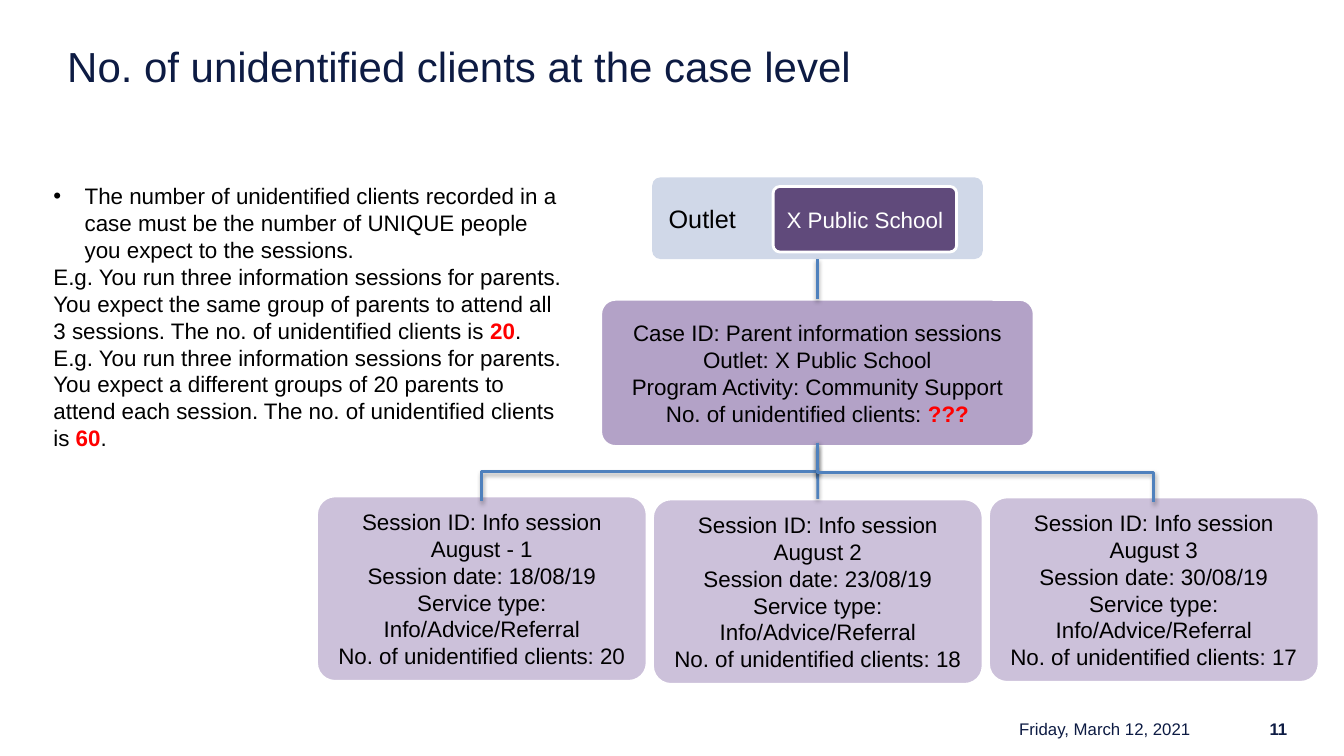
from lxml import etree
from pptx import Presentation
from pptx import util as u
from pptx.dml.color import RGBColor
from pptx.enum import shapes, text
from pptx.oxml import parse_xml
from pptx.oxml.ns import nsdecls, qn

NAVY, BLACK, WHITE, RED, BLUE = "0D1B43", "000000", "FFFFFF", "FF0000", "4F81BD"
LEFT, CENTER, RIGHT = text.PP_ALIGN.LEFT, text.PP_ALIGN.CENTER, text.PP_ALIGN.RIGHT
TOP, MIDDLE = text.MSO_ANCHOR.TOP, text.MSO_ANCHOR.MIDDLE

presentation = Presentation()
presentation.slide_width, presentation.slide_height = u.Emu(12192000), u.Emu(6858000)
COLUMN = presentation.slide_width / 40
ROW = presentation.slide_height / 30
slide = presentation.slides.add_slide(presentation.slide_layouts[1])


def grid(left, top, width, height):
    """Turn columns and rows into slide lengths."""
    return [u.Emu(round(n * unit)) for n, unit in
            zip((left, top, width, height), (COLUMN, ROW, COLUMN, ROW))]


def write(shape, lines, size, color, align, anchor, side=0.0, bold=False):
    """Fill a shape with paragraphs; parts between | marks are bold red."""
    frame = shape.text_frame
    frame.word_wrap = True
    frame.auto_size = text.MSO_AUTO_SIZE.NONE
    frame.vertical_anchor = anchor
    frame.margin_left = frame.margin_right = u.Inches(side)
    frame.margin_top = frame.margin_bottom = u.Inches(side / 2)
    for index, line in enumerate(lines):
        paragraph = frame.paragraphs[0] if index == 0 else frame.add_paragraph()
        paragraph.alignment = align
        paragraph.space_before = u.Pt(0)
        for part, words in enumerate(line.split("|")):
            run = paragraph.add_run()
            run.text = words
            marked = part % 2 == 1
            run.font.name, run.font.size = "Arial", u.Pt(size)
            run.font.bold = bold or marked
            run.font.color.rgb = RGBColor.from_string(RED if marked else color)


# Title and explanation
title, body = slide.shapes.title, slide.placeholders[1]
title.left, title.top, title.width, title.height = grid(2, 1.6, 36, 2.64)
write(title, ["No. of unidentified clients at the case level"], 30, NAVY, LEFT, TOP)

body.left, body.top, body.width, body.height = grid(1.29, 7.04, 15.78, 11.16)
write(body, [
    "The number of unidentified clients recorded in a case must be the number of "
    "UNIQUE people you expect to the sessions.",
    "E.g. You run three information sessions for parents. You expect the same group of "
    "parents to attend all 3 sessions. The no. of unidentified clients is |20|.",
    "E.g. You run three information sessions for parents. You expect a different groups of "
    "20 parents to attend each session. The no. of unidentified clients is| 60|.",
], 16, BLACK, LEFT, TOP, side=0.1)
for index, paragraph in enumerate(body.text_frame.paragraphs):
    properties = paragraph._p.get_or_add_pPr()
    indent = u.Inches(0.31) if index == 0 else 0
    properties.set("marL", str(indent))
    properties.set("indent", str(-indent))
    if index == 0:
        etree.SubElement(properties, qn("a:buChar")).set("char", "•")
    else:
        etree.SubElement(properties, qn("a:buNone"))

# Outlet, case and session cards
SESSION_WIDTH, SESSION_HEIGHT, FIRST_SESSION = 9.84, 7.36, 9.42
cards = [
    ("outlet", (19.41, 7.04, 9.84, 3.24), "D0D8E8", ["Outlet"], 18, BLACK, LEFT, 0.14),
    ("school", (23.01, 7.4, 5.46, 2.6), "604A7B", ["X Public School"], 16, WHITE, CENTER, 0.07),
    ("case", (17.88, 11.88, 12.9, 5.84), "B3A2C7", [
        "Case ID: Parent information sessions",
        "Outlet: X Public School",
        "Program Activity: Community Support",
        "No. of unidentified clients: |???|",
    ], 16, BLACK, CENTER, 0.1),
]
sessions = [("August - 1", "18/08/19", 20, 19.68),
            ("August 2", "23/08/19", 18, 19.8),
            ("August 3", "30/08/19", 17, 19.72)]
for index, (name, date, clients, top) in enumerate(sessions):
    box = (FIRST_SESSION + 10 * index, top, SESSION_WIDTH, SESSION_HEIGHT)
    cards.append((name, box, "CCC1DA", [
        f"Session ID: Info session {name}",
        f"Session date: {date}",
        "Service type: Info/Advice/Referral",
        f"No. of unidentified clients: {clients}",
    ], 16, BLACK, CENTER, 0.08))

drawn = {}
for name, box, fill, lines, size, color, align, side in cards:
    card = slide.shapes.add_shape(shapes.MSO_SHAPE.ROUNDED_RECTANGLE, *grid(*box))
    card.adjustments[0] = 0.1
    card.shadow.inherit = False
    card.fill.solid()
    card.fill.fore_color.rgb = RGBColor.from_string(fill)
    if name == "outlet":
        card.line.fill.background()
    else:
        card.line.color.rgb = RGBColor.from_string(WHITE)
        card.line.width = u.Pt(2)
    write(card, lines, size, color, align, MIDDLE, side)
    drawn[name] = card

# Connectors: straight down the middle, elbows to the outer sessions
connectors = []
for upper, lower in (("outlet", "case"), ("case", "August 2")):
    connector = slide.shapes.add_connector(shapes.MSO_CONNECTOR.STRAIGHT, 0, 0, 0, 0)
    connector.begin_connect(drawn[upper], 2)
    connector.end_connect(drawn[lower], 0)
    connectors.append(connector)

START_COLUMN, START_ROW = 24.33, 17.56
start_x, start_y = grid(START_COLUMN, START_ROW, 0, 0)[:2]
for name, turn, flip in (("August - 1", 90, False), ("August 3", 270, True)):
    session = drawn[name]
    end_x = session.left + session.width // 2
    end_y = session.top + round(0.2 * ROW)
    drop, reach = end_y - start_y, abs(end_x - start_x)
    left = (start_x + end_x - drop) // 2
    top = (start_y + end_y - reach) // 2
    connector = slide.shapes.add_connector(
        shapes.MSO_CONNECTOR.ELBOW, left, top, left + drop, top + reach)
    transform = connector._element.spPr.find(qn("a:xfrm"))
    transform.set("rot", str(turn * 60000))
    if flip:
        transform.set("flipH", "1")
    connectors.append(connector)

for connector in connectors:
    connector.line.color.rgb = RGBColor.from_string(BLUE)
    connector.line.width = u.Pt(2)
    connector._element.spPr.append(parse_xml(
        f'<a:effectLst {nsdecls("a")}><a:outerShdw blurRad="40000" dist="20000" dir="5400000" '
        f'rotWithShape="0"><a:srgbClr val="{BLACK}"><a:alpha val="38000"/></a:srgbClr>'
        '</a:outerShdw></a:effectLst>'))

# Footer
for words, left, width, bold in (("Friday, March 12, 2021", 26.4, 9.33, False),
                                 ("11", 35.34, 3.27, True)):
    footer = slide.shapes.add_textbox(*grid(left, 28.48, width, 0.92))
    write(footer, [words], 12, NAVY, RIGHT, MIDDLE, side=0.1, bold=bold)

presentation.save("out.pptx")
